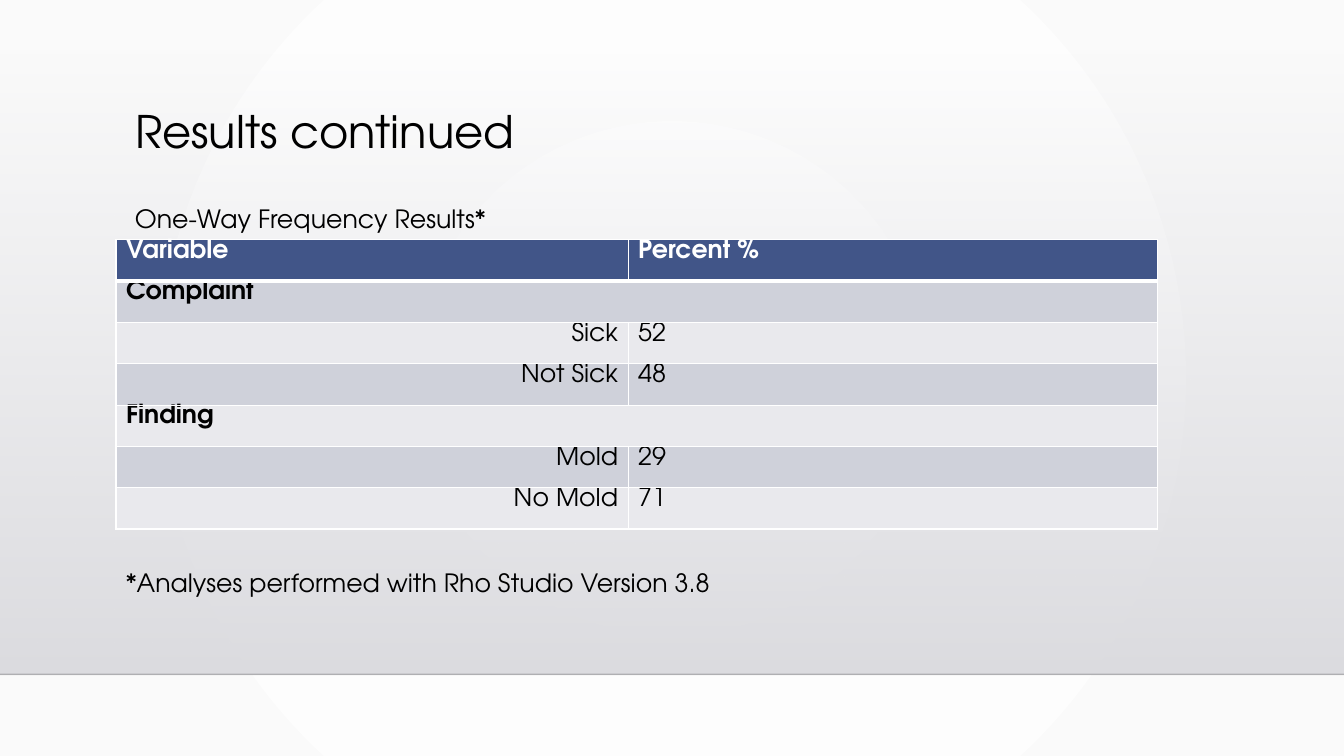
from dataclasses import dataclass

from lxml.etree import SubElement
from pptx import Presentation
from pptx.dml.color import RGBColor as Color
from pptx.enum.shapes import MSO_CONNECTOR as Connector, MSO_SHAPE as Shape
from pptx.enum.text import MSO_ANCHOR as Anchor, MSO_AUTO_SIZE as AutoSize, PP_ALIGN as Align
from pptx.oxml import parse_xml
from pptx.oxml.ns import nsdecls, qn
from pptx.util import Inches, Pt


@dataclass(frozen=True)
class Theme:
    font: str = "TeX Gyre Adventor"
    title_size: int = 32
    body_size: int = 18
    ink: str = "000000"
    rule: str = "000001"
    white: str = "FFFFFF"
    page_edge: str = "FAFAFA"
    panel_top: str = "DCDCE0"
    panel_bottom: str = "DEDEE2"
    header: str = "415588"
    bands: tuple = ("CFD1DA", "E9E9ED")


FREQUENCIES = [
    ("Variable", "Percent %"),
    ("Complaint", None),
    ("Sick", "52"),
    ("Not Sick", "48"),
    ("Finding", None),
    ("Mold", "29"),
    ("No Mold", "71"),
]


class SlideBuilder:
    """Draws styled elements on one title-only slide."""

    def __init__(self, deck, theme):
        self.theme = theme
        self.page = deck.slides.add_slide(deck.slide_layouts[5])

    def style(self, para, size, color, bold=False, align=Align.LEFT):
        para.alignment = align
        font = para.font
        font.name, font.size, font.bold = self.theme.font, Pt(size), bold
        font.color.rgb = Color.from_string(color)

    def gradient(self, fill, colors):
        fill.gradient()
        for stop, color in zip(fill.gradient_stops, colors):
            stop.color.rgb = Color.from_string(color)

    def set_alpha(self, parent, percent):
        color = next(parent.iter(qn("a:srgbClr")))
        SubElement(color, qn("a:alpha")).set("val", str(percent * 1000))

    def background(self):
        self.gradient(self.page.background.fill, (self.theme.white, self.theme.page_edge))
        linear = next(self.page.element.iter(qn("a:lin")))
        linear.getparent().replace(linear, parse_xml(
            f'<a:path {nsdecls("a")} path="circle">'
            '<a:fillToRect l="50000" t="50000" r="50000" b="50000"/></a:path>'))

    def panel(self, left, top, width, height):
        panel = self.page.shapes.add_shape(
            Shape.RECTANGLE, Inches(left), Inches(top), Inches(width), Inches(height))
        panel.shadow.inherit = False
        self.gradient(panel.fill, (self.theme.panel_top, self.theme.panel_bottom))
        panel.fill.gradient_angle = 270
        self.set_alpha(panel.element.spPr, 0)
        panel.line.fill.background()

    def rule(self, left, top, width):
        rule = self.page.shapes.add_connector(
            Connector.STRAIGHT, Inches(left), Inches(top), Inches(left + width), Inches(top))
        rule.line.width = Pt(1)
        rule.line.color.rgb = Color.from_string(self.theme.rule)
        self.set_alpha(rule.element.spPr, 20)
        SubElement(rule.element.spPr, qn("a:effectLst"))

    def title(self, text, left, top, width, height):
        title = self.page.shapes.title
        title.left, title.top = Inches(left), Inches(top)
        title.width, title.height = Inches(width), Inches(height)
        title.element.getparent().append(title.element)
        frame = title.text_frame
        frame.text = text
        frame.word_wrap = True
        frame.auto_size = AutoSize.NONE
        frame.vertical_anchor = Anchor.TOP
        para = frame.paragraphs[0]
        para.line_spacing = 0.9
        self.style(para, self.theme.title_size, self.theme.ink)

    def text(self, text, left, top, width, height):
        box = self.page.shapes.add_textbox(
            Inches(left), Inches(top), Inches(width), Inches(height))
        frame = box.text_frame
        frame.text = text
        frame.word_wrap = True
        frame.auto_size = AutoSize.SHAPE_TO_FIT_TEXT
        self.style(frame.paragraphs[0], self.theme.body_size, self.theme.ink)

    def cell(self, cell, text, fill, color, bold, align, bottom):
        cell.margin_top = cell.margin_bottom = 0
        cell.text = text
        self.style(cell.text_frame.paragraphs[0], self.theme.body_size, color, bold, align)
        cell.fill.solid()
        cell.fill.fore_color.rgb = Color.from_string(fill)
        properties = next(cell.text_frame._txBody.getparent().iter(qn("a:tcPr")))
        for index, (side, width) in enumerate(zip("LRTB", (1, 1, 1, bottom))):
            properties.insert(index, parse_xml(
                f'<a:ln{side} {nsdecls("a")} w="{Pt(width)}"><a:solidFill>'
                f'<a:srgbClr val="{self.theme.white}"/></a:solidFill></a:ln{side}>'))

    def table(self, records, left, top, column_widths, row_height):
        table = self.page.shapes.add_table(
            len(records), len(column_widths), Inches(left), Inches(top),
            Inches(sum(column_widths)), Inches(row_height * len(records))).table
        table.horz_banding = False
        for column, width in zip(table.columns, column_widths):
            column.width = Inches(width)
        for index, (label, value) in enumerate(records):
            table.rows[index].height = Inches(row_height)
            heading, group = index == 0, value is None
            fill = self.theme.header if heading else self.theme.bands[(index - 1) % 2]
            color = self.theme.white if heading else self.theme.ink
            bold, bottom = heading or group, 3 if heading else 1
            align = Align.LEFT if bold else Align.RIGHT
            name, percent = table.cell(index, 0), table.cell(index, 1)
            self.cell(name, label, fill, color, bold, align, bottom)
            self.cell(percent, value or "", fill, color, bold, Align.LEFT, bottom)
            if group:
                name.merge(percent)


def main():
    deck = Presentation()
    deck.slide_width, deck.slide_height = Inches(13.33), Inches(7.5)
    slide = SlideBuilder(deck, Theme())
    slide.background()
    slide.panel(0, 0.51, 13.33, 6.18)
    slide.rule(0, 6.69, 13.33)
    slide.title("Results continued", 1.24, 1.04, 10.5, 1.15)
    slide.table(FREQUENCIES, 1.15, 2.38, (5.08, 5.25), 0.41)
    slide.text("One-Way Frequency Results*", 1.24, 1.97, 7.71, 0.41)
    slide.text("*Analyses performed with Rho Studio Version 3.8", 1.15, 5.58, 9.59, 0.4)
    deck.save("out.pptx")


if __name__ == "__main__":
    main()
